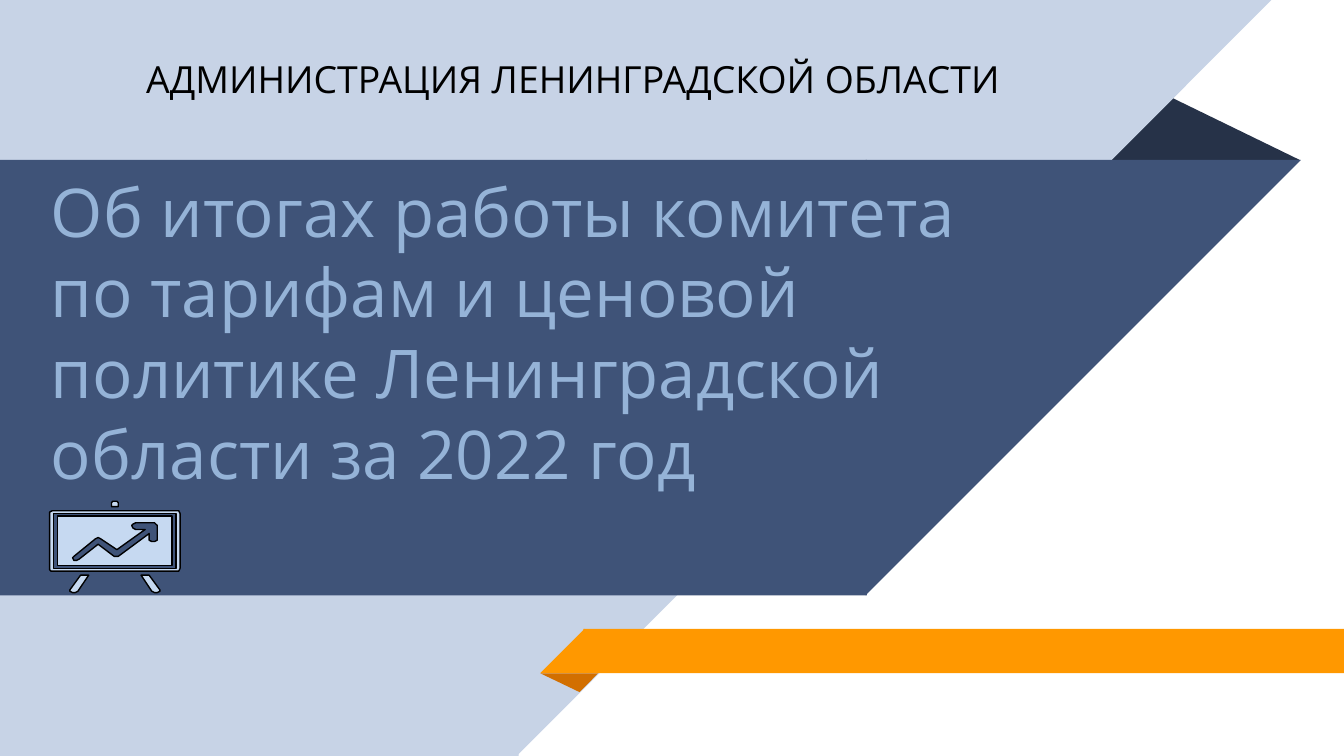
from pptx import Presentation
from pptx.dml.color import RGBColor
from pptx.enum.shapes import MSO_SHAPE
from pptx.enum.text import MSO_ANCHOR, PP_ALIGN
from pptx.util import Pt

PX = 9144
RECT = MSO_SHAPE.RECTANGLE
RIGHT = MSO_SHAPE.RIGHT_TRIANGLE
TRI = MSO_SHAPE.ISOSCELES_TRIANGLE
TOP, MIDDLE = MSO_ANCHOR.TOP, MSO_ANCHOR.MIDDLE
LEFT, CENTER = PP_ALIGN.LEFT, PP_ALIGN.CENTER
INK = RGBColor(0x26, 0x32, 0x48)
PALE = RGBColor(0xC7, 0xD3, 0xE6)
NAVY = RGBColor(0x3F, 0x53, 0x78)
RUST = RGBColor(0xD2, 0x6F, 0x00)
ORANGE = RGBColor(0xFF, 0x98, 0x00)
SKY = RGBColor(0x95, 0xB3, 0xD7)
ICE = RGBColor(0xC6, 0xD9, 0xF1)
BLACK = RGBColor(0, 0, 0)

deck = Presentation()
deck.slide_width = 1000 * PX
deck.slide_height = deck.slide_width * 9 // 16
slide = deck.slides.add_slide(deck.slide_layouts[6])
shapes = slide.shapes

bands = [
    (TRI, 825, 72, 142, 47, INK, None),
    (RECT, 0, 0, 386, 563, PALE, None),
    (RIGHT, 385, -1, 562, 563, PALE, "flipV"),
    (RECT, 0, 119, 645, 324, NAVY, None),
    (RIGHT, 644, 119, 324, 324, NAVY, "flipV"),
    (TRI, 402, 501, 43, 14, RUST, "turn"),
    (RECT, 434, 468, 568, 33, ORANGE, None),
    (RIGHT, 402, 468, 33, 33, ORANGE, "flipH"),
]
for kind, x, y, w, h, color, pose in bands:
    band = shapes.add_shape(kind, x * PX, y * PX, w * PX, h * PX)
    band.shadow.inherit = False
    band.fill.solid()
    band.fill.fore_color.rgb = color
    band.line.fill.background()
    if kind == TRI:
        band.adjustments[0] = 0.32
    if pose == "turn":
        band.rotation = 180
    elif pose:
        band._element.spPr.xfrm.set(pose, "1")

frame = [
    [(131, 382), (131, 423), (40, 423), (40, 382)],
    [(39, 380), (37, 381), (37, 424), (38, 425), (40, 425), (131, 425),
     (133, 425), (134, 423), (134, 382), (133, 380), (131, 380)],
]
knob = [[(85, 373), (84, 373), (83, 374), (83, 377), (88, 377), (88, 374),
         (87, 373)]]
leg = [(60, 428), (52, 439), (52, 440), (54, 441), (56, 441), (58, 440),
       (66, 428)]
twin = [(171 - x, y) for x, y in leg]
arrow = [
    (115, 389), (117, 391), (117, 402), (115, 403), (113, 403), (111, 402),
    (111, 397), (88, 414), (86, 414), (85, 414), (73, 405), (59, 416),
    (57, 417), (55, 417), (54, 415), (55, 414), (71, 401), (73, 400),
    (75, 401), (87, 409), (108, 394), (101, 394), (99, 393), (98, 391),
    (99, 390), (101, 389),
]
screen = [arrow, [(43, 384), (43, 421), (128, 421), (128, 384)]]
for loops in (frame, knob, [leg], [twin], screen):
    pen = shapes.build_freeform(*loops[0][0], scale=PX)
    pen.add_line_segments(loops[0][1:])
    for loop in loops[1:]:
        pen.move_to(*loop[0])
        pen.add_line_segments(loop[1:])
    part = pen.convert_to_shape()
    part.shadow.inherit = False
    part.fill.solid()
    part.fill.fore_color.rgb = ICE
    part.line.color.rgb = BLACK
    part.line.width = Pt(0.75)

texts = [
    ("Об итогах работы комитета по тарифам и ценовой политике "
     "Ленинградской области за 2022 год",
     28, 119, 724, 255, 10, 10, MIDDLE, LEFT, 36, SKY),
    ("АДМИНИСТРАЦИЯ ЛЕНИНГРАДСКОЙ ОБЛАСТИ",
     18, 13, 817, 135, 10, 34, TOP, CENTER, 20, BLACK),
]
for text, x, y, w, h, side, head, anchor, align, size, color in texts:
    box = shapes.add_textbox(x * PX, y * PX, w * PX, h * PX)
    body = box.text_frame
    body.word_wrap = True
    body.vertical_anchor = anchor
    body.margin_left = body.margin_right = side * PX
    body.margin_top = head * PX
    body.margin_bottom = 10 * PX
    body.text = text
    para = body.paragraphs[0]
    para.alignment = align
    font = para.runs[0].font
    font.name = "Open Sans"
    font.size = Pt(size)
    font.color.rgb = color

deck.save("out.pptx")
